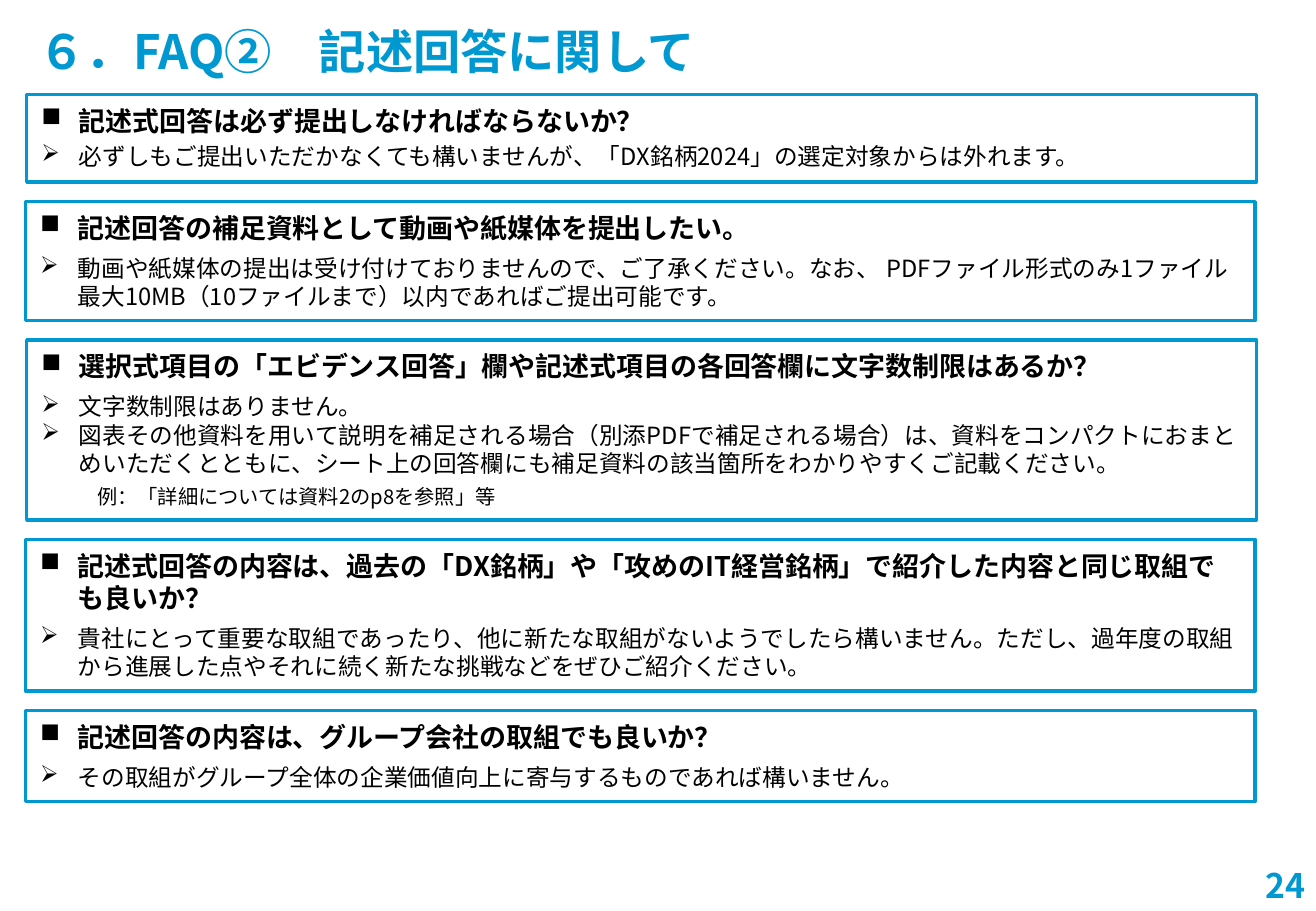
from lxml import etree
from pptx import Presentation
from pptx.dml.color import RGBColor
from pptx.enum.shapes import MSO_SHAPE
from pptx.enum.text import MSO_ANCHOR, PP_ALIGN
from pptx.oxml.ns import qn
from pptx.util import Inches, Pt

BLUE = RGBColor(0x00, 0x98, 0xD0)
BLACK = RGBColor(0x00, 0x00, 0x00)
FONT = "Noto Sans CJK JP"
RECTANGLE = MSO_SHAPE.RECTANGLE
TOP, MIDDLE, BOTTOM = MSO_ANCHOR.TOP, MSO_ANCHOR.MIDDLE, MSO_ANCHOR.BOTTOM
LEFT, RIGHT = PP_ALIGN.LEFT, PP_ALIGN.RIGHT

FIRST_TOP, BOX_WIDTH, BOX_GAP = 0.78, 10.12, 0.16
HANGING = 0.31
NOTE_INDENT = 0.46

# Paragraph styles: bullet, left margin, and font format
STYLES = {
    "question": ("■", HANGING, {"size": Pt(16), "bold": True}),
    "answer": ("➢", HANGING, {"size": Pt(14), "bold": False}),
    "note": (None, NOTE_INDENT, {"size": Pt(12), "bold": False}),
}

# Each box: left, height, and paragraphs of (style, space before, space after, text)
FAQ_BOXES = [
    (0.22, 0.72, [
        ("question", 0, 3, "記述式回答は必ず提出しなければならないか？"),
        ("answer", 0, 3, "必ずしもご提出いただかなくても構いませんが、「DX銘柄2024」の選定対象からは外れます。"),
    ]),
    (0.21, 0.98, [
        ("question", 0, 6, "記述回答の補足資料として動画や紙媒体を提出したい。"),
        ("answer", 0, 12, "動画や紙媒体の提出は受け付けておりませんので、ご了承ください。なお、 "
                          "PDFファイル形式のみ1ファイル最大10MB（10ファイルまで）以内であればご提出可能です。"),
    ]),
    (0.22, 1.48, [
        ("question", 0, 6, "選択式項目の「エビデンス回答」欄や記述式項目の各回答欄に文字数制限はあるか？"),
        ("answer", 0, 0, "文字数制限はありません。"),
        ("answer", 0, 0, "図表その他資料を用いて説明を補足される場合（別添PDFで補足される場合）は、資料をコンパクトにおまとめ"
                         "いただくとともに、シート上の回答欄にも補足資料の該当箇所をわかりやすくご記載ください。"),
        ("note", 4, 0, "例：「詳細については資料2のp8を参照」等"),
    ]),
    (0.21, 1.25, [
        ("question", 0, 6, "記述式回答の内容は、過去の「DX銘柄」や「攻めのIT経営銘柄」で紹介した内容と同じ取組でも良いか？"),
        ("answer", 0, 12, "貴社にとって重要な取組であったり、他に新たな取組がないようでしたら構いません。"
                          "ただし、過年度の取組から進展した点やそれに続く新たな挑戦などをぜひご紹介ください。"),
    ]),
    (0.21, 0.75, [
        ("question", 0, 6, "記述回答の内容は、グループ会社の取組でも良いか？"),
        ("answer", 0, 12, "その取組がグループ全体の企業価値向上に寄与するものであれば構いません。"),
    ]),
]


def add_span(para, text, color, font_format):
    span = para.add_run()
    span.text = text
    span.font.name = FONT
    span.font.color.rgb = color
    for name, value in font_format.items():
        setattr(span.font, name, value)
    east_asian = etree.SubElement(span.font._element, qn("a:ea"))
    east_asian.set("typeface", FONT)


def set_indent(para, margin, bullet):
    properties = para._p.get_or_add_pPr()
    properties.set("marL", str(Inches(margin)))
    properties.set("indent", str(-Inches(margin) if bullet else 0))
    if bullet:
        etree.SubElement(properties, qn("a:buChar")).set("char", bullet)


def add_faq_box(page, left, top, width, height, entries):
    box = page.shapes.add_shape(
        RECTANGLE, Inches(left), Inches(top), Inches(width), Inches(height))
    box.shadow.inherit = False
    box.fill.background()
    box.line.color.rgb = BLUE
    box.line.width = Pt(2)
    frame = box.text_frame
    frame_format = {
        "word_wrap": True, "vertical_anchor": TOP,
        "margin_left": Inches(0.12), "margin_right": Inches(0.12),
        "margin_top": Inches(0.08), "margin_bottom": Inches(0.08),
    }
    for name, value in frame_format.items():
        setattr(frame, name, value)
    for index, (style, before, after, text) in enumerate(entries):
        para = frame.add_paragraph() if index else frame.paragraphs[0]
        bullet, margin, font_format = STYLES[style]
        para_format = {"alignment": LEFT, "space_before": Pt(before), "space_after": Pt(after)}
        for name, value in para_format.items():
            setattr(para, name, value)
        set_indent(para, margin, bullet)
        add_span(para, text, BLACK, font_format)


def add_label(page, left, top, width, height, text, size, anchor, alignment):
    box = page.shapes.add_textbox(
        Inches(left), Inches(top), Inches(width), Inches(height))
    box.text_frame.word_wrap = True
    box.text_frame.vertical_anchor = anchor
    para = box.text_frame.paragraphs[0]
    para.alignment = alignment
    add_span(para, text, BLUE, {"size": Pt(size), "bold": True})


def build_faq_page(deck):
    page = deck.slides.add_slide(deck.slide_layouts[6])
    # Title
    add_label(page, 0.22, 0.13, 10.4, 0.57, "６．FAQ②　記述回答に関して", 28, MIDDLE, LEFT)
    # Stack of question boxes
    top = FIRST_TOP
    for left, height, entries in FAQ_BOXES:
        add_faq_box(page, left, top, BOX_WIDTH, height, entries)
        top += height + BOX_GAP
    # Page number
    add_label(page, 9.89, 6.98, 0.95, 0.52, "24", 20, BOTTOM, RIGHT)


def main():
    deck = Presentation()
    deck.slide_width = Inches(10.83)
    deck.slide_height = Inches(7.5)
    build_faq_page(deck)
    deck.save("out.pptx")


if __name__ == "__main__":
    main()
